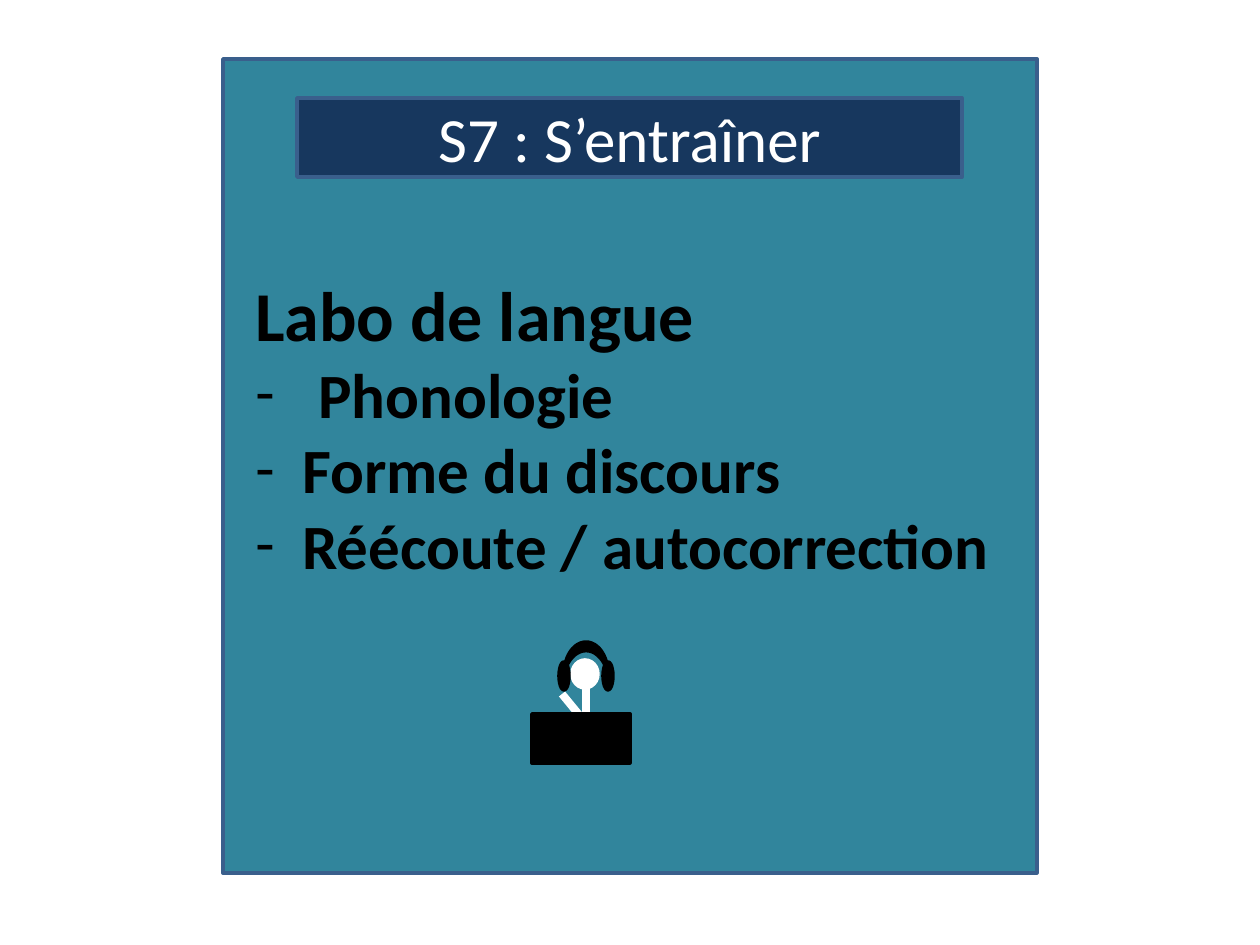
"""Build the language-lab training slide."""
from typing import NamedTuple

from lxml import etree
from pptx import Presentation
from pptx import util as u
from pptx.dml import color
from pptx.enum import shapes, text
from pptx.oxml import ns

COLORS = {
    "panel": "31859C",
    "title": "17375E",
    "border": "3A5F8C",
    "white": "FFFFFF",
    "black": "000000",
}
FONT = "Calibri"
PX_PER_INCH = 126


class Figure(NamedTuple):
    kind: shapes.MSO_SHAPE
    left: int
    top: int
    width: int
    height: int
    fill: str
    line: str
    rotation: int = 0
    adjustment: float | None = None


class Limb(NamedTuple):
    start: tuple[int, int]
    end: tuple[int, int]


class Entry(NamedTuple):
    words: str
    size: int
    indent: int = 0


KIND = shapes.MSO_SHAPE
PANEL = Figure(KIND.RECTANGLE, 223, 59, 814, 814, "panel", "border")
TITLE = Figure(KIND.RECTANGLE, 297, 98, 665, 79, "title", "border")
HEAD = Figure(KIND.OVAL, 572, 660, 26, 28, "white", "white")
LIMBS = [Limb((586, 688), (586, 753)), Limb((562, 694), (585, 722))]
DESK_AND_HEADSET = [
    Figure(KIND.RECTANGLE, 532, 714, 98, 49, "black", "black"),
    Figure(KIND.MOON, 570, 636, 32, 44, "black", "black", 90, 0.27),
    Figure(KIND.OVAL, 559, 662, 10, 28, "black", "black"),
    Figure(KIND.OVAL, 603, 662, 10, 28, "black", "black"),
]
ENTRIES = [
    Entry("Labo de langue", 40),
    Entry("Phonologie", 36, 63),
    Entry("Forme du discours", 36, 47),
    Entry("Réécoute / autocorrection", 36, 47),
]


def px(length: int) -> u.Emu:
    """Turn pixels into EMU."""
    return u.Emu(round(length * u.Inches(1) / PX_PER_INCH))


def rgb(name: str) -> color.RGBColor:
    """Look up a named colour."""
    return color.RGBColor.from_string(COLORS[name])


def draw_figure(page, figure: Figure):
    """Draw one filled and outlined preset shape."""
    shape = page.shapes.add_shape(figure.kind, *map(px, figure[1:5]))
    shape.shadow.inherit = False
    shape.fill.solid()
    shape.fill.fore_color.rgb = rgb(figure.fill)
    shape.line.color.rgb = rgb(figure.line)
    shape.line.width = u.Pt(2)
    shape.rotation = figure.rotation
    if figure.adjustment is not None:
        shape.adjustments[0] = figure.adjustment
    return shape


def draw_limb(page, limb: Limb) -> None:
    """Draw one thick white line of the stick figure."""
    line = page.shapes.add_connector(
        shapes.MSO_CONNECTOR.STRAIGHT, *map(px, limb.start + limb.end)
    )
    line.line.color.rgb = rgb("white")
    line.line.width = u.Pt(4.5)
    etree.SubElement(line._element.spPr, ns.qn("a:effectLst"))


def write(para, words: str, size: int, ink: str, bold: bool = False) -> None:
    """Fill a paragraph and format its run."""
    para.text = words
    font = para.runs[0].font
    font.name = FONT
    font.size = u.Pt(size)
    font.bold = bold
    font.color.rgb = rgb(ink)


def add_dash(para, indent: int) -> None:
    """Give a paragraph a hanging dash bullet."""
    properties = para._p.get_or_add_pPr()
    properties.set("marL", str(px(indent)))
    properties.set("indent", str(-px(indent)))
    etree.SubElement(properties, ns.qn("a:buFont"), typeface=FONT)
    etree.SubElement(properties, ns.qn("a:buChar"), char="-")


def draw_title(page) -> None:
    """Draw the title bar with its centred text."""
    frame = draw_figure(page, TITLE).text_frame
    frame.vertical_anchor = text.MSO_ANCHOR.MIDDLE
    para = frame.paragraphs[0]
    para.alignment = text.PP_ALIGN.CENTER
    write(para, "S7 : S’entraîner", 36, "white")


def draw_entries(page) -> None:
    """Draw the heading and its dashed list."""
    box = page.shapes.add_textbox(*map(px, (243, 265, 774, 428)))
    frame = box.text_frame
    frame.word_wrap = True
    for index, entry in enumerate(ENTRIES):
        para = frame.add_paragraph() if index else frame.paragraphs[0]
        write(para, entry.words, entry.size, "black", bold=True)
        if entry.indent:
            add_dash(para, entry.indent)


def main() -> None:
    """Build and save the deck."""
    deck = Presentation()
    deck.slide_width, deck.slide_height = u.Inches(10), u.Inches(7.5)
    page = deck.slides.add_slide(deck.slide_layouts[6])
    draw_figure(page, PANEL)
    draw_title(page)
    draw_entries(page)
    draw_figure(page, HEAD)
    for limb in LIMBS:
        draw_limb(page, limb)
    for figure in DESK_AND_HEADSET:
        draw_figure(page, figure)
    deck.save("out.pptx")


if __name__ == "__main__":
    main()
